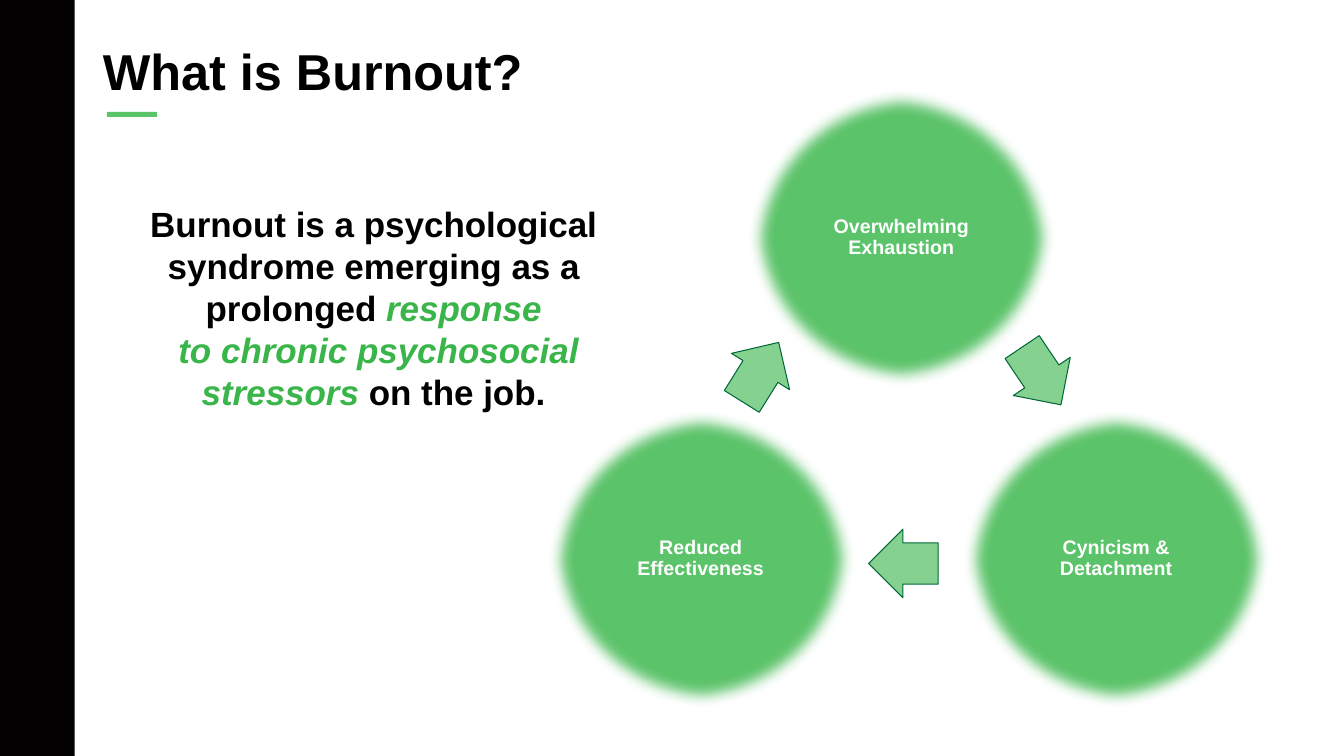
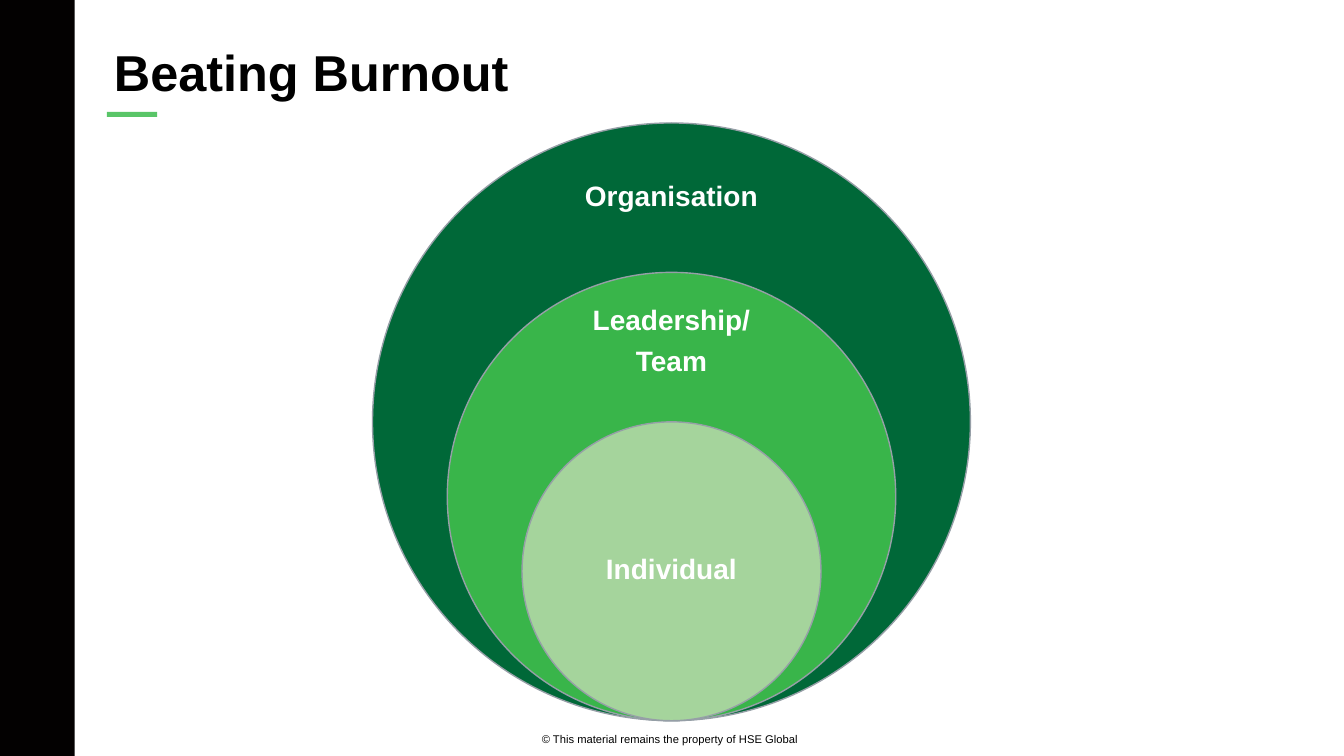
import pptx
import pptx.util
import pptx.dml.color
import pptx.enum.shapes
import pptx.enum.text
from lxml import etree
from pptx.oxml.ns import qn

Inches, Pt = pptx.util.Inches, pptx.util.Pt
SHAPE = pptx.enum.shapes.MSO_SHAPE
ANCHOR = pptx.enum.text.MSO_ANCHOR
ALIGN = pptx.enum.text.PP_ALIGN

FONT = "Arial"
COLORS = {"black": "000000", "white": "FFFFFF", "band": "030101", "accent": "59C568",
          "green": "39B54A", "dark": "006838", "light": "A5D49C", "grey": "969FA7"}

# Content: cycle slide
DEFINITION = [
    [("Burnout is a psychological syndrome emerging as a prolonged ", False),
     ("response", True)],
    [(" to chronic psychosocial stressors ", True), ("on the job.", False)],
]
CYCLE = [  # label, circle centre, arrow centre, arrow rotation
    ("Overwhelming Exhaustion", (8.94, 2.36), (10.33, 3.73), 56.1),
    ("Cynicism & Detachment", (11.07, 5.54), (8.96, 5.59), 180),
    ("Reduced Effectiveness", (6.95, 5.54), (7.54, 3.69), 302),
]
CYCLE_SIZE = (3.05, 2.96)
ARROW_SIZE = (0.69, 0.68)

# Content: nested circles slide
LEVELS = [  # label lines, share of the largest diameter, fill, label centre y
    (["Organisation"], 1, "dark", 1.96),
    (["Leadership/", "Team"], 0.75, "green", 3.39),
    (["Individual"], 0.5, "light", 5.66),
]
LARGEST, NEST_CENTER, NEST_BOTTOM = 5.93, 6.66, 7.15
COPYRIGHT = "© This material remains the property of HSE Global"


def rgb(name):
    return pptx.dml.color.RGBColor.from_string(COLORS[name])


def style(font, size, color="black", bold=True, italic=False):
    font.name, font.size, font.bold, font.italic = FONT, Pt(size), bold, italic
    font.color.rgb = rgb(color)


def around(center, size):
    """Left, top, width, height of a box with the given centre."""
    (x, y), (width, height) = center, size
    return [Inches(v) for v in (x - width / 2, y - height / 2, width, height)]


def add_shape(slide, kind, box, fill, line=None, width=1, alpha=None, soft_edge=None):
    shape = slide.shapes.add_shape(kind, *box)
    shape.shadow.inherit = False
    shape.fill.solid()
    shape.fill.fore_color.rgb = rgb(fill)
    properties = shape.element.spPr
    if alpha:
        color = properties.find(qn("a:solidFill")).find(qn("a:srgbClr"))
        etree.SubElement(color, qn("a:alpha"), val=str(alpha * 1000))
    if soft_edge:
        effects = properties.find(qn("a:effectLst"))
        etree.SubElement(effects, qn("a:softEdge"), rad=str(Pt(soft_edge)))
    if line:
        shape.line.color.rgb = rgb(line)
        shape.line.width = Pt(width)
    else:
        shape.line.fill.background()
    return shape


def add_text_box(slide, box, anchor=ANCHOR.TOP, inset=None):
    frame = slide.shapes.add_textbox(*box).text_frame
    frame.word_wrap = True
    frame.vertical_anchor = anchor
    if inset is not None:
        frame.margin_left = frame.margin_right = Inches(inset)
        frame.margin_top = frame.margin_bottom = Inches(inset)
    return frame


def add_label(slide, center, size, lines, points):
    frame = add_text_box(slide, around(center, size), ANCHOR.MIDDLE, 0.02)
    frame.text = "\n".join(lines)
    for index, paragraph in enumerate(frame.paragraphs):
        paragraph.alignment = ALIGN.CENTER
        paragraph.line_spacing = 0.9
        if index:
            paragraph.space_before = Pt(8)
        style(paragraph.font, points, "white")


def add_slide(presentation, layout, title, left, top):
    slide = presentation.slides.add_slide(layout)
    shape = slide.shapes.title
    shape.left, shape.top, shape.width, shape.height = map(Inches, (left, top, 11.78, 0.82))
    frame = shape.text_frame
    frame.text = title
    frame.vertical_anchor = ANCHOR.MIDDLE
    paragraph = frame.paragraphs[0]
    paragraph.alignment = ALIGN.LEFT
    paragraph.line_spacing = 0.9
    style(paragraph.font, 36)
    return slide


def decorate_layout(layout, slide):
    """Place the side band and the title accent on the layout."""
    parts = [((0, 0, 0.74, 7.5), "band"), ((1.06, 1.11, 0.5, 0.05), "accent")]
    for index, (box, color) in enumerate(parts):
        shape = add_shape(slide, SHAPE.RECTANGLE, [Inches(v) for v in box], color)
        shape.element.nvSpPr.cNvPr.set("id", str(101 + index))
        layout.shapes.element.insert(2 + index, shape.element)


def fill_cycle(slide):
    box = [Inches(v) for v in (0.75, 1.96, 5.91, 2.2)]
    frame = add_text_box(slide, box)
    for index, runs in enumerate(DEFINITION):
        paragraph = frame.add_paragraph() if index else frame.paragraphs[0]
        paragraph.alignment = ALIGN.CENTER
        for text, emphasis in runs:
            run = paragraph.add_run()
            run.text = text
            style(run.font, 25, "green" if emphasis else "black", italic=emphasis)
    for label, center, arrow_center, rotation in CYCLE:
        add_shape(slide, SHAPE.OVAL, around(center, CYCLE_SIZE), "green", "dark",
                  alpha=82, soft_edge=10)
        add_label(slide, center, (2.14, 2.09), [label], 14)
        arrow = add_shape(slide, SHAPE.RIGHT_ARROW, around(arrow_center, ARROW_SIZE),
                          "green", "dark", 0.75, alpha=61)
        arrow.adjustments[0], arrow.adjustments[1] = 0.6, 0.5
        arrow.rotation = rotation


def fill_levels(slide):
    for lines, share, fill, label_y in LEVELS:
        diameter = LARGEST * share
        center = (NEST_CENTER, NEST_BOTTOM - diameter / 2)
        add_shape(slide, SHAPE.OVAL, around(center, (diameter, diameter)), fill, "grey")
        add_label(slide, (NEST_CENTER, label_y), (2.1, 0.9), lines, 20)
    frame = add_text_box(slide, [Inches(v) for v in (4.6, 7.22, 4.09, 0.25)])
    frame.text = COPYRIGHT
    frame.paragraphs[0].alignment = ALIGN.CENTER
    style(frame.paragraphs[0].font, 8, bold=False)


def main():
    presentation = pptx.Presentation()
    presentation.slide_width, presentation.slide_height = Inches(13.33), Inches(7.5)
    layout = presentation.slide_layouts.get_by_name("Title Only")
    cycle = add_slide(presentation, layout, "What is Burnout?", 0.92, 0.33)
    decorate_layout(layout, cycle)
    fill_cycle(cycle)
    fill_levels(add_slide(presentation, layout, "Beating Burnout", 1.03, 0.34))
    presentation.save("out.pptx")


if __name__ == "__main__":
    main()
